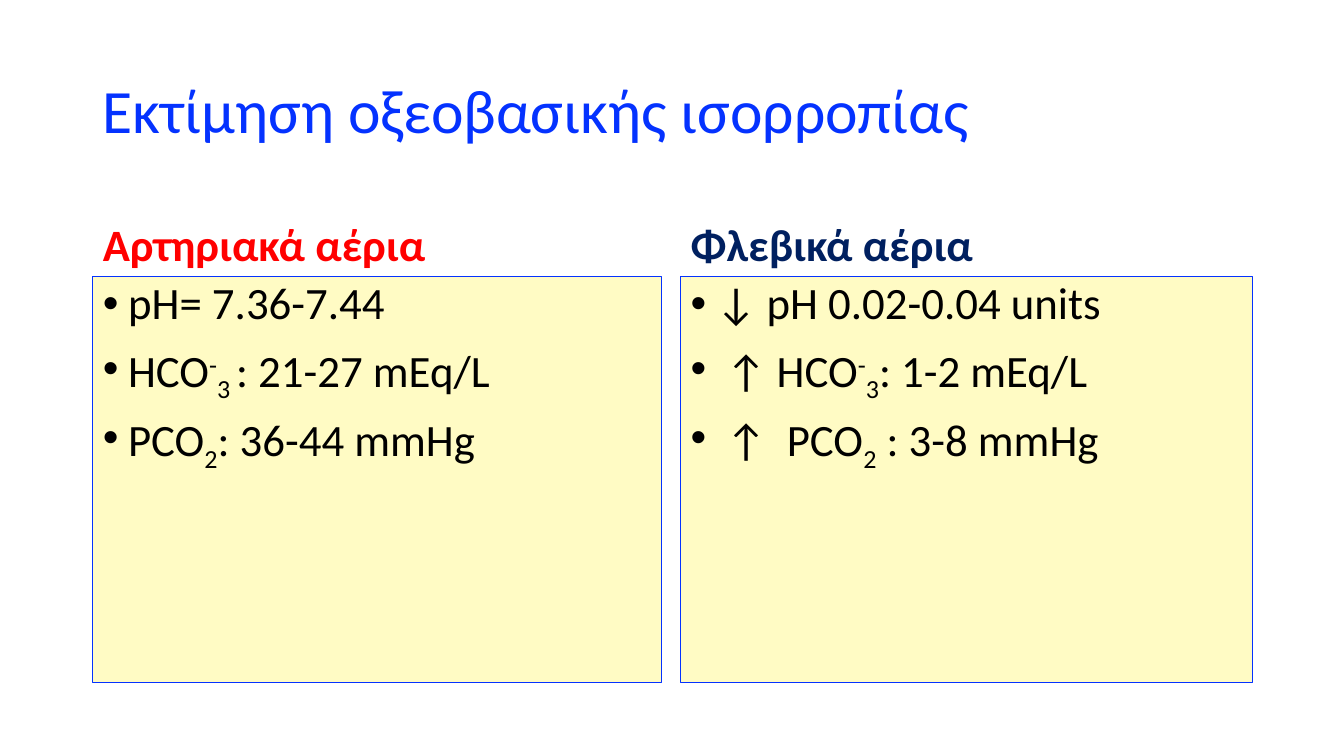
from lxml.etree import SubElement
from pptx import Presentation
from pptx.dml.color import RGBColor
from pptx.enum.text import MSO_ANCHOR, MSO_AUTO_SIZE, PP_ALIGN
from pptx.oxml.ns import qn
from pptx.util import Inches, Pt

BLUE = "0432FF"
SUPERSCRIPT, SUBSCRIPT = 30, -25
ARTERIAL = [
    [("pH= 7.36-7.44", 0)],
    [("HCO", 0), ("-", SUPERSCRIPT), ("3 ", SUBSCRIPT), (": 21-27 mEq/L", 0)],
    [("PCO", 0), ("2", SUBSCRIPT), (": 36-44 mmHg", 0)],
]
VENOUS = [
    [("↓ pH 0.02-0.04 units", 0)],
    [(" ↑ HCO", 0), ("-", SUPERSCRIPT), ("3", SUBSCRIPT), (": 1-2 mEq/L", 0)],
    [(" ↑  PCO", 0), ("2", SUBSCRIPT), (" : 3-8 mmHg", 0)],
]


def rgb(value):
    """Return the colour for a hex string."""
    return RGBColor.from_string(value)


def place(box, left, top, width, height, anchor):
    """Position a placeholder and fix how its text sits."""
    box.left, box.top = Inches(left), Inches(top)
    box.width, box.height = Inches(width), Inches(height)
    frame = box.text_frame
    frame.word_wrap = True
    frame.auto_size = MSO_AUTO_SIZE.NONE
    frame.vertical_anchor = anchor


def style_paragraph(para, size, colour, bold=False, before=0):
    """Format a paragraph and all of its runs."""
    para.alignment = PP_ALIGN.LEFT
    para.line_spacing = 0.9
    para.space_before = Pt(before)
    for span in para.runs:
        span.font.name = "Calibri"
        span.font.size = Pt(size)
        span.font.bold = bold
        span.font.color.rgb = rgb(colour)


def add_bullet(para):
    """Give a paragraph a hanging round bullet."""
    properties = para._p.get_or_add_pPr()
    properties.set("marL", str(Inches(0.25)))
    properties.set("indent", str(Inches(-0.25)))
    SubElement(properties, qn("a:buFont")).set("typeface", "Arial")
    SubElement(properties, qn("a:buChar")).set("char", "•")


def write_heading(box, text, size, colour, bold=False):
    """Write a single formatted line into a placeholder."""
    box.text_frame.text = text
    style_paragraph(box.text_frame.paragraphs[0], size, colour, bold)


def write_values(box, lines):
    """Write the bulleted blood gas values on a yellow panel."""
    box.fill.solid()
    box.fill.fore_color.rgb = rgb("FFFBC4")
    box.line.color.rgb = rgb(BLUE)
    box.line.width = Pt(0.75)
    frame = box.text_frame
    for number, line in enumerate(lines):
        para = frame.add_paragraph() if number else frame.paragraphs[0]
        add_bullet(para)
        for text, baseline in line:
            span = para.add_run()
            span.text = text
            if baseline:
                span.font._element.set("baseline", str(baseline * 1000))
        style_paragraph(para, 32, "000000", before=10 if number else 0)


def main():
    """Build the acid-base comparison slide."""
    deck = Presentation()
    deck.slide_width, deck.slide_height = Inches(13.33), Inches(7.5)
    page = deck.slides.add_slide(deck.slide_layouts.get_by_name("Comparison"))
    title, *boxes = page.placeholders
    place(title, 0.92, 0.4, 11.5, 1.45, MSO_ANCHOR.MIDDLE)
    write_heading(title, "Εκτίμηση οξεοβασικής ισορροπίας", 44, BLUE)

    columns = [
        (0.92, 5.64, "Αρτηριακά αέρια", "FF0000", ARTERIAL),
        (6.75, 5.67, "Φλεβικά αέρια", "002060", VENOUS),
    ]
    pairs = zip(boxes[::2], boxes[1::2])
    for (heading, panel), (left, width, text, colour, lines) in zip(pairs, columns):
        place(heading, left, 1.84, width, 0.9, MSO_ANCHOR.BOTTOM)
        write_heading(heading, text, 32, colour, bold=True)
        place(panel, left, 2.74, width, 4.03, MSO_ANCHOR.TOP)
        write_values(panel, lines)
    deck.save("out.pptx")


if __name__ == "__main__":
    main()
